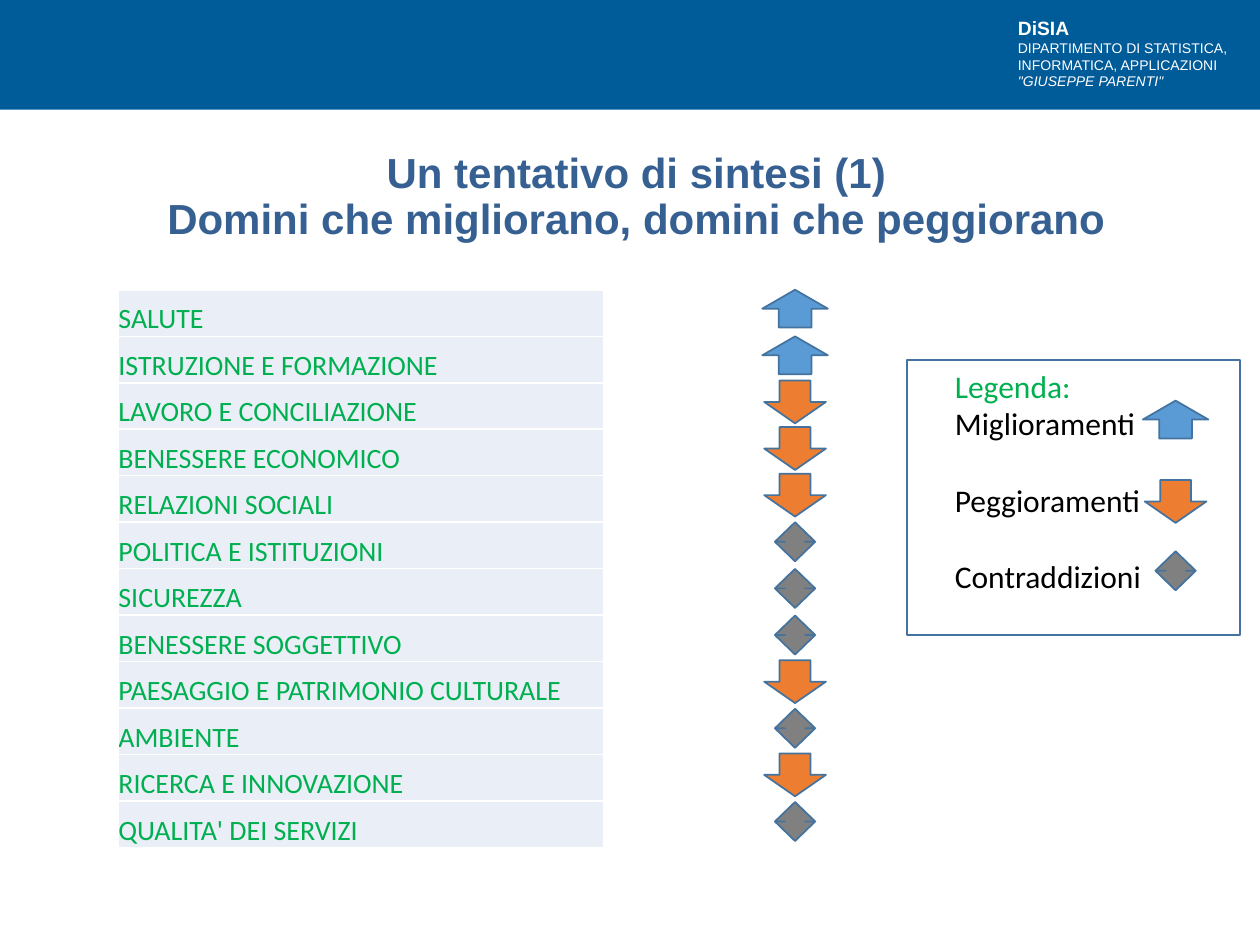
from dataclasses import dataclass
from typing import Optional

from lxml.etree import SubElement
from pptx import Presentation
from pptx.dml.color import RGBColor
from pptx.enum.shapes import MSO_SHAPE as Shape
from pptx.enum.text import MSO_ANCHOR as Anchor, PP_ALIGN as Align
from pptx.oxml.ns import qn
from pptx.util import Inches, Pt

HEADER_BLUE = RGBColor(0x00, 0x5B, 0x99)
TITLE_BLUE = RGBColor(0x37, 0x60, 0x92)
OUTLINE_BLUE = RGBColor(0x43, 0x73, 0x9E)
ARROW_BLUE = RGBColor(0x5B, 0x9B, 0xD5)
ORANGE = RGBColor(0xED, 0x7D, 0x31)
GRAY = RGBColor(0x80, 0x80, 0x80)
GREEN = RGBColor(0x00, 0xB0, 0x50)
CELL_FILL = RGBColor(0xEA, 0xEF, 0xF7)
WHITE = RGBColor(0xFF, 0xFF, 0xFF)
BLACK = RGBColor(0x00, 0x00, 0x00)


@dataclass(frozen=True)
class Trend:
    label: str
    preset: Shape
    width: float
    height: float
    color: RGBColor


@dataclass(frozen=True)
class Domain:
    name: str
    trend: Trend


BETTER = Trend("Miglioramenti", Shape.UP_ARROW, 0.52, 0.3, ARROW_BLUE)
WORSE = Trend("Peggioramenti", Shape.DOWN_ARROW, 0.49, 0.34, ORANGE)
MIXED = Trend("Contraddizioni", Shape.UP_DOWN_ARROW, 0.32, 0.31, GRAY)

DOMAINS = [
    Domain("SALUTE", BETTER),
    Domain("ISTRUZIONE E FORMAZIONE", BETTER),
    Domain("LAVORO E CONCILIAZIONE", WORSE),
    Domain("BENESSERE ECONOMICO", WORSE),
    Domain("RELAZIONI SOCIALI", WORSE),
    Domain("POLITICA E ISTITUZIONI", MIXED),
    Domain("SICUREZZA", MIXED),
    Domain("BENESSERE SOGGETTIVO", MIXED),
    Domain("PAESAGGIO E PATRIMONIO CULTURALE", WORSE),
    Domain("AMBIENTE", MIXED),
    Domain("RICERCA E INNOVAZIONE", WORSE),
    Domain("QUALITA' DEI SERVIZI", MIXED),
]
TABLE_LEFT, TABLE_TOP, TABLE_WIDTH, TABLE_HEIGHT = 0.94, 2.3, 3.85, 4.43
TREND_X, FIRST_TREND_Y, TREND_STEP = 6.31, 2.45, 0.37
LEGEND_TREND_X = 9.33
LEGEND = [(BETTER, 3.33), (WORSE, 3.98), (MIXED, 4.53)]


def add_run(paragraph, text: str, font: str, size: float, color: RGBColor,
            bold: bool = False, italic: bool = False) -> None:
    run = paragraph.add_run()
    run.text = text
    run.font.name, run.font.size = font, Pt(size)
    run.font.bold, run.font.italic = bold, italic
    run.font.color.rgb = color


def add_box(slide, preset: Shape, left: float, top: float, width: float, height: float,
            fill: Optional[RGBColor], line: Optional[RGBColor]) -> None:
    shape = slide.shapes.add_shape(
        preset, Inches(left), Inches(top), Inches(width), Inches(height))
    shape.shadow.inherit = False
    if fill is None:
        shape.fill.background()
    else:
        shape.fill.solid()
        shape.fill.fore_color.rgb = fill
    if line is None:
        shape.line.fill.background()
    else:
        shape.line.color.rgb = line
        shape.line.width = Pt(1)


def add_trend(slide, trend: Trend, center_x: float, center_y: float) -> None:
    add_box(slide, trend.preset, center_x - trend.width / 2, center_y - trend.height / 2,
            trend.width, trend.height, trend.color, OUTLINE_BLUE)


def add_text_frame(slide, left: float, top: float, width: float, height: float):
    box = slide.shapes.add_textbox(Inches(left), Inches(top), Inches(width), Inches(height))
    box.text_frame.word_wrap = True
    return box.text_frame


def set_borders(cell, color: RGBColor) -> None:
    properties = cell._tc.get_or_add_tcPr()
    for position, side in enumerate(("a:lnL", "a:lnR", "a:lnT", "a:lnB")):
        line = SubElement(properties, qn(side), w=str(Pt(1)))
        fill = SubElement(line, qn("a:solidFill"))
        SubElement(fill, qn("a:srgbClr"), val=str(color))
        properties.insert(position, line)


def add_header(slide) -> None:
    add_box(slide, Shape.RECTANGLE, 0, 0, 10, 0.87, HEADER_BLUE, None)
    frame = add_text_frame(slide, 7.98, 0.08, 1.95, 0.69)
    add_run(frame.paragraphs[0], "DiSIA", "Arial", 11, WHITE, bold=True)
    for text in ("DIPARTIMENTO DI STATISTICA,", "INFORMATICA, APPLICAZIONI"):
        add_run(frame.add_paragraph(), text, "Arial", 8, WHITE)
    add_run(frame.add_paragraph(), '"GIUSEPPE PARENTI"', "Arial", 8, WHITE, italic=True)


def format_title(slide) -> None:
    title = slide.shapes.title
    title.left, title.top = Inches(0.74), Inches(1.12)
    title.width, title.height = Inches(8.62), Inches(0.9)
    title.text_frame.word_wrap = True
    title.text_frame.vertical_anchor = Anchor.MIDDLE
    paragraph = title.text_frame.paragraphs[0]
    paragraph.alignment, paragraph.line_spacing = Align.CENTER, 0.9
    add_run(paragraph, "Un tentativo di sintesi (1)", "Arial", 24, TITLE_BLUE, bold=True)
    paragraph.add_line_break()
    add_run(paragraph, "Domini che migliorano, domini che peggiorano",
            "Arial", 24, TITLE_BLUE, bold=True)


def add_domains(slide) -> None:
    table = slide.shapes.add_table(
        len(DOMAINS), 1, Inches(TABLE_LEFT), Inches(TABLE_TOP),
        Inches(TABLE_WIDTH), Inches(TABLE_HEIGHT)).table
    table.first_row = table.horz_banding = False
    for index, domain in enumerate(DOMAINS):
        cell = table.cell(index, 0)
        cell.margin_left = cell.margin_right = cell.margin_top = cell.margin_bottom = 0
        cell.vertical_anchor = Anchor.BOTTOM
        cell.fill.solid()
        cell.fill.fore_color.rgb = CELL_FILL
        set_borders(cell, WHITE)
        add_run(cell.text_frame.paragraphs[0], domain.name, "Calibri", 16, GREEN)
        add_trend(slide, domain.trend, TREND_X, FIRST_TREND_Y + index * TREND_STEP)


def add_legend(slide) -> None:
    frame = add_text_frame(slide, 7.48, 2.86, 1.98, 1.92)
    add_run(frame.paragraphs[0], "Legenda:", "Calibri", 18, GREEN)
    for index, (trend, center_y) in enumerate(LEGEND):
        paragraph = frame.add_paragraph()
        paragraph.space_before = Pt(22 if index else 0)
        add_run(paragraph, trend.label, "Calibri", 18, BLACK)
        add_trend(slide, trend, LEGEND_TREND_X, center_y)
    add_box(slide, Shape.RECTANGLE, 7.2, 2.86, 2.64, 2.18, None, OUTLINE_BLUE)


def main() -> None:
    presentation = Presentation()
    presentation.slide_width, presentation.slide_height = Inches(10), Inches(7.5)
    slide = presentation.slides.add_slide(presentation.slide_layouts[5])  # title only
    add_header(slide)
    format_title(slide)
    add_domains(slide)
    add_legend(slide)
    presentation.save("out.pptx")


if __name__ == "__main__":
    main()
